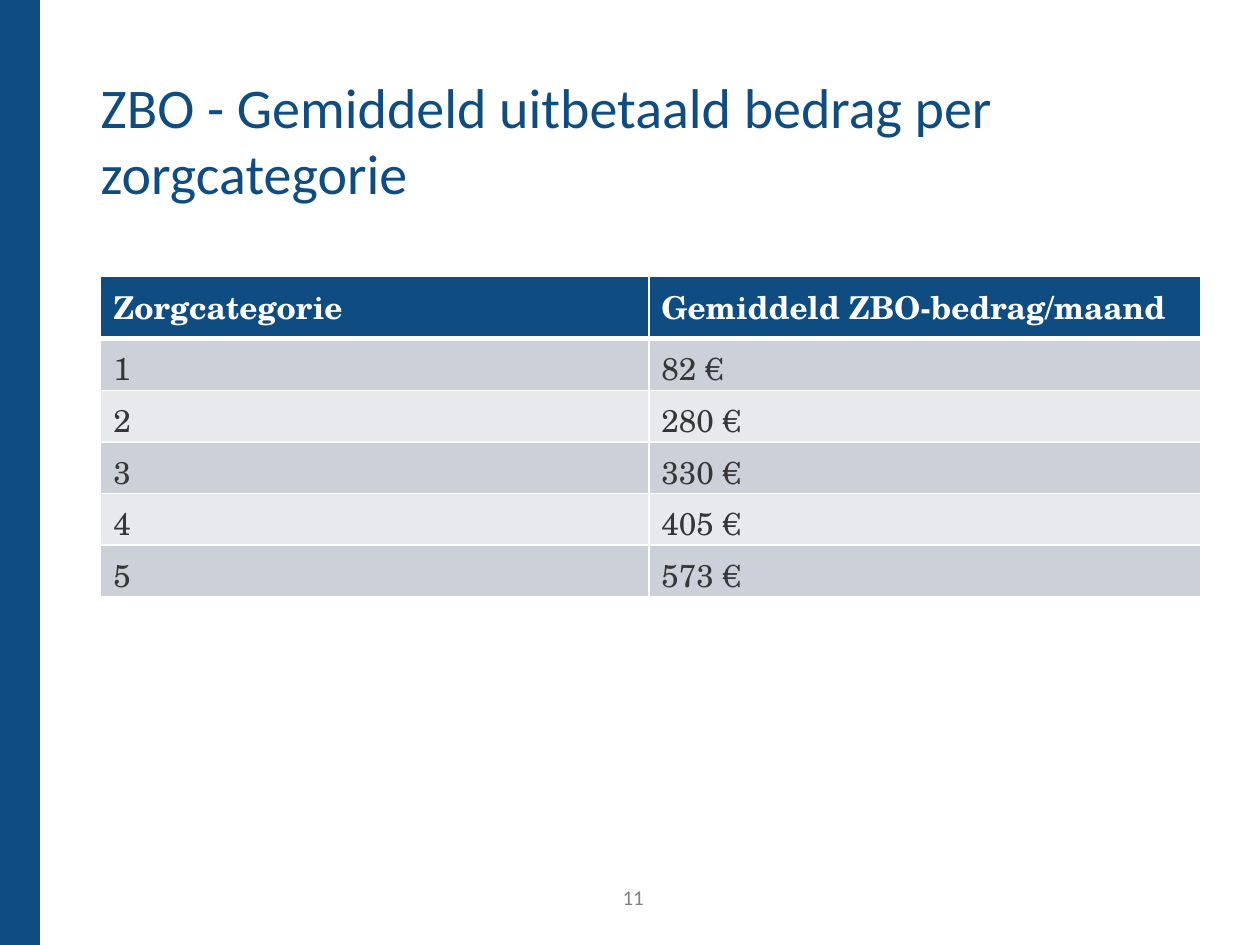
from lxml.etree import SubElement
from pptx import Presentation
from pptx.dml.color import RGBColor
from pptx.enum.shapes import MSO_SHAPE as Shape
from pptx.enum.text import MSO_ANCHOR as Anchor, MSO_AUTO_SIZE as Fit, PP_ALIGN as Align
from pptx.oxml.ns import qn
from pptx.util import Cm, Pt

TITLE = "ZBO - Gemiddeld uitbetaald bedrag per zorgcategorie"
PAGE = "11"
ROWS = [
    ("Zorgcategorie", "Gemiddeld ZBO-bedrag/maand"),
    ("1", "82 €"),
    ("2", "280 €"),
    ("3", "330 €"),
    ("4", "405 €"),
    ("5", "573 €"),
]
BLUE, WHITE, GREY, DARK = "0F4C81", "FFFFFF", "808080", "373636"
BANDS = ["E7E9ED", "CCD0D8"]
LEFT, WIDTH = 2.03, 22.17
COLS = [11.05, 11.12]
HEAD, ROW = 1.27, 1.04


def paint(item, color):
    """Give a fill a solid colour."""
    item.solid()
    item.fore_color.rgb = RGBColor.from_string(color)


def style(par, name, size, color, bold=False):
    for run in par.runs:
        font = run.font
        font.name, font.size, font.bold = name, Pt(size), bold
        font.color.rgb = RGBColor.from_string(color)


def rule(cell, low):
    """Draw white cell borders, the bottom one low points wide."""
    props = cell._tc.get_or_add_tcPr()
    for side, wide in (("L", 1), ("R", 1), ("T", 1), ("B", low)):
        line = SubElement(props, qn(f"a:ln{side}"), w=str(Pt(wide)))
        fill = SubElement(line, qn("a:solidFill"))
        SubElement(fill, qn("a:srgbClr"), val=WHITE)


prs = Presentation()
prs.slide_width, prs.slide_height = Cm(25.4), Cm(19.05)
slide = prs.slides.add_slide(prs.slide_layouts[5])
shapes = slide.shapes

bar = shapes.add_shape(Shape.RECTANGLE, 0, 0, Cm(0.8), prs.slide_height)
bar.shadow.inherit = False
paint(bar.fill, BLUE)
paint(bar.line.fill, BLUE)
bar.line.width = Pt(1)

page = shapes.add_textbox(Cm(11.73), Cm(17.6), Cm(1.5), Cm(0.99)).text_frame
page.word_wrap = True
page.vertical_anchor = Anchor.MIDDLE
page.text = PAGE
page.paragraphs[0].alignment = Align.RIGHT
style(page.paragraphs[0], "Calibri", 12, GREY)

title = shapes.title
title.left, title.top, title.width, title.height = Cm(LEFT), Cm(1.47), Cm(WIDTH), Cm(2.64)
frame = title.text_frame
frame.text = TITLE
frame.auto_size = Fit.NONE
frame.vertical_anchor = Anchor.TOP
frame.margin_left = frame.margin_right = frame.margin_top = frame.margin_bottom = 0
head = frame.paragraphs[0]
head.alignment = Align.LEFT
head.line_spacing = Pt(38)
style(head, "Calibri", 32, BLUE)

high = HEAD + ROW * (len(ROWS) - 1)
table = shapes.add_table(len(ROWS), len(COLS), Cm(LEFT), Cm(5.56), Cm(WIDTH), Cm(high)).table
for col, wide in zip(table.columns, COLS):
    col.width = Cm(wide)
for r, texts in enumerate(ROWS):
    top = r == 0
    table.rows[r].height = Cm(HEAD if top else ROW)
    for c, text in enumerate(texts):
        cell = table.cell(r, c)
        cell.text = text
        rule(cell, 3 if top else 1)
        paint(cell.fill, BLUE if top else BANDS[r % 2])
        style(cell.text_frame.paragraphs[0], "TeX Gyre Schola", 18, WHITE if top else DARK, top)

prs.save("out.pptx")
